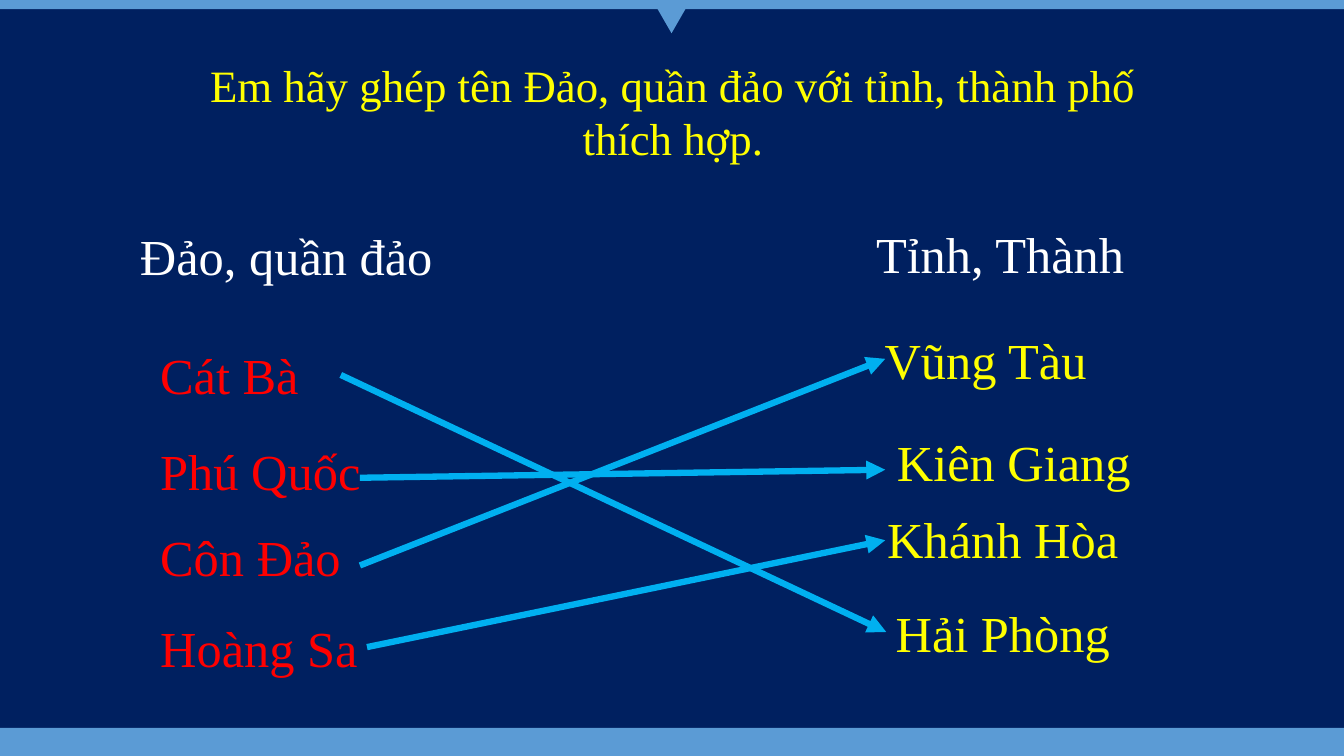
"""Build a matching exercise that joins islands to their provinces."""
from lxml import etree
from pptx import Presentation
from pptx.dml.color import RGBColor
from pptx.enum.shapes import MSO_CONNECTOR, MSO_SHAPE
from pptx.enum.text import MSO_AUTO_SIZE, PP_ALIGN
from pptx.oxml.ns import qn
from pptx.util import Inches, Pt

RECT, TRIANGLE = MSO_SHAPE.RECTANGLE, MSO_SHAPE.ISOSCELES_TRIANGLE
STRAIGHT = MSO_CONNECTOR.STRAIGHT
LEFT, CENTER = PP_ALIGN.LEFT, PP_ALIGN.CENTER
NAVY, BLUE, SKY = "002060", "5B9BD5", "00B0F0"
YELLOW, RED, WHITE = "FFFF00", "FF0000", "FFFFFF"


def rgb(value):
    return RGBColor.from_string(value)


def add_text(s, text, x, y, w, h=0.71, size=36, color=WHITE, align=LEFT):
    tf = s.shapes.add_textbox(Inches(x), Inches(y), Inches(w), Inches(h)).text_frame
    tf.word_wrap = True
    tf.auto_size = MSO_AUTO_SIZE.SHAPE_TO_FIT_TEXT
    p = tf.paragraphs[0]
    p.alignment = align
    r = p.add_run()
    r.text = text
    r.font.name = "Times New Roman"
    r.font.size = Pt(size)
    r.font.color.rgb = rgb(color)


prs = Presentation()
prs.slide_width, prs.slide_height = Inches(13.33), Inches(7.5)
s = prs.slides.add_slide(prs.slide_layouts[6])
s.background.fill.solid()
s.background.fill.fore_color.rgb = rgb(NAVY)

for kind, x, y, w, h, angle in [
    (RECT, 0, 7.22, 13.33, 0.28, 0),
    (RECT, 0, 0, 13.33, 0.09, 0),
    (TRIANGLE, 6.47, 0, 0.38, 0.33, 180),
]:
    sp = s.shapes.add_shape(kind, Inches(x), Inches(y), Inches(w), Inches(h))
    sp.rotation = angle
    sp.shadow.inherit = False
    sp.fill.solid()
    sp.fill.fore_color.rgb = rgb(BLUE)
    sp.line.fill.background()

add_text(s, "Em hãy ghép tên Đảo, quần đảo với tỉnh, thành phố thích hợp.",
         1.61, 0.52, 10.13, h=1.18, size=32, color=YELLOW, align=CENTER)
add_text(s, "Đảo, quần đảo", 1.29, 2.18, 3.27)
add_text(s, "Tỉnh, Thành", 8.59, 2.16, 3.08)

for island, y in [("Cát Bà", 3.36), ("Phú Quốc", 4.32), ("Côn Đảo", 5.17), ("Hoàng Sa", 6.07)]:
    add_text(s, island, 1.49, y, 2.55, color=RED)

for province, x, y, w in [
    ("Vũng Tàu", 8.59, 3.22, 2.37),
    ("Kiên Giang", 8.78, 4.23, 2.55),
    ("Khánh Hòa", 8.67, 4.99, 2.55),
    ("Hải Phòng", 8.67, 5.92, 2.55),
]:
    add_text(s, province, x, y, w, color=YELLOW, align=CENTER)

for x1, y1, x2, y2 in [
    (3.38, 3.72, 8.79, 6.27),
    (3.57, 4.74, 8.78, 4.66),
    (3.57, 5.61, 8.78, 3.56),
    (3.64, 6.42, 8.78, 5.36),
]:
    arrow = s.shapes.add_connector(STRAIGHT, Inches(x1), Inches(y1), Inches(x2), Inches(y2))
    arrow.line.color.rgb = rgb(SKY)
    arrow.line.width = Pt(4.5)
    sp_pr = arrow.element.spPr
    etree.SubElement(sp_pr.find(qn("a:ln")), qn("a:tailEnd"), type="triangle")
    etree.SubElement(sp_pr, qn("a:effectLst"))

prs.save("out.pptx")
